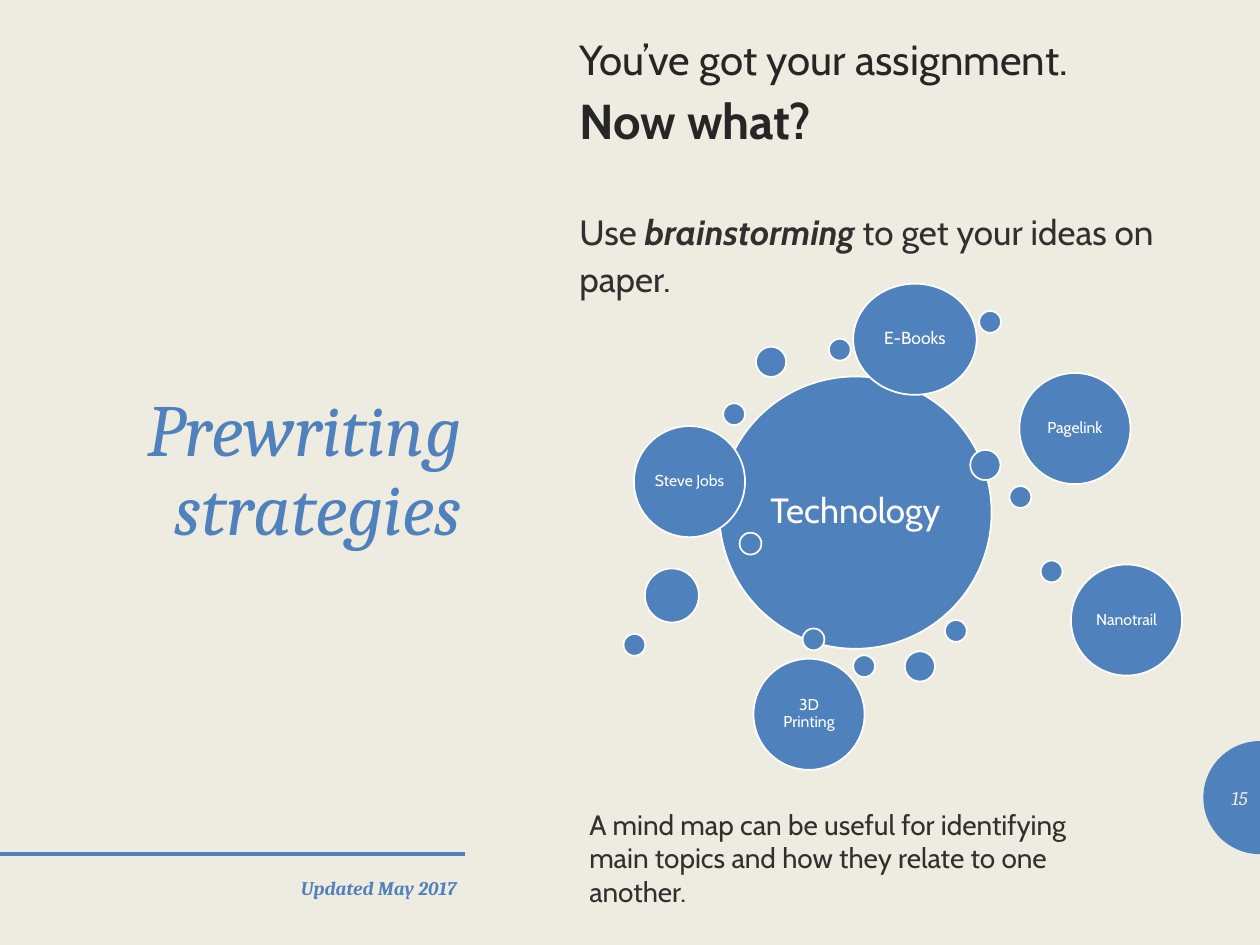
import math

import pptx
import pptx.dml.color
import pptx.enum.shapes
import pptx.enum.text
import pptx.oxml.ns
import pptx.util
from lxml import etree

Cm = pptx.util.Cm
Pt = pptx.util.Pt
ALIGN = pptx.enum.text.PP_ALIGN
ANCHOR = pptx.enum.text.MSO_ANCHOR

COLORS = {
    "background": "EEECE1",
    "accent": "4F81BD",
    "heading": "262626",
    "body": "303030",
    "white": "FFFFFF",
}
SMALL, MEDIUM, LARGE, TOPIC = 0.44, 0.61, 1.09, 2.24
BUBBLES = [
    (14.5, 7.59, 5.49, 5.49, "Technology", 20),
    (16.18, 12.67, SMALL),
    (20.35, 9.8, SMALL),
    (18.24, 13.13, MEDIUM),
    (16.71, 6.83, SMALL),
    (14.91, 10.74, SMALL),
    (12.78, 8.59, TOPIC, TOPIC, "Steve Jobs", 9),
    (15.24, 6.99, MEDIUM),
    (13, 11.46, LARGE),
    (20.55, 7.52, TOPIC, TOPIC, "Pagelink", 9),
    (19.56, 9.07, MEDIUM),
    (12.57, 12.78, SMALL),
    (19.05, 12.5, SMALL),
    (21.59, 11.38, TOPIC, TOPIC, "Nanotrail", 9),
    (20.98, 11.3, SMALL),
    (15.19, 13.28, TOPIC, TOPIC, "3D Printing", 9),
    (17.2, 13.21, SMALL),
    (17.2, 5.72, 2.49, TOPIC, "E-Books", 10),
    (14.58, 8.13, SMALL),
    (19.74, 6.27, SMALL),
]


class SlideBuilder:
    """Draws styled elements on the current slide."""

    def __init__(self, slide):
        self.slide = slide
        self.sans = "Cabin"
        self.serif = "Cambria"

    def color(self, name):
        return pptx.dml.color.RGBColor.from_string(COLORS[name])

    def background(self, name):
        fill = self.slide.background.fill
        fill.solid()
        fill.fore_color.rgb = self.color(name)

    def font(self, font, family, size, color, bold=False, italic=False):
        font.name, font.size = family, Pt(size)
        font.bold, font.italic = bold, italic
        font.color.rgb = self.color(color)

    def title(self, text, left, top, width, height):
        shape = self.slide.shapes.title
        shape.left, shape.top = Cm(left), Cm(top)
        shape.width, shape.height = Cm(width), Cm(height)
        frame = shape.text_frame
        frame.text = text
        frame.auto_size = pptx.enum.text.MSO_AUTO_SIZE.NONE
        frame.vertical_anchor = ANCHOR.MIDDLE
        paragraph = frame.paragraphs[0]
        paragraph.alignment = ALIGN.RIGHT
        paragraph.line_spacing = 0.9
        self.font(paragraph.font, self.serif, 42, "accent", italic=True)

    def text_box(self, left, top, width, height, anchor=ANCHOR.TOP):
        shape = self.slide.shapes.add_textbox(Cm(left), Cm(top), Cm(width), Cm(height))
        shape.text_frame.word_wrap = True
        shape.text_frame.vertical_anchor = anchor
        return shape.text_frame

    def label(self, text, box, family, size, color, bold=False, italic=False,
              align=ALIGN.LEFT, anchor=ANCHOR.TOP):
        paragraph = self.text_box(*box, anchor).paragraphs[0]
        paragraph.text = text
        paragraph.alignment = align
        self.font(paragraph.font, family, size, color, bold, italic)

    def run(self, paragraph, text, size, color, bold=False, italic=False):
        run = paragraph.add_run()
        run.text = text
        self.font(run.font, self.sans, size, color, bold, italic)

    def fill(self, shape, color):
        shape.shadow.inherit = False
        shape.fill.solid()
        shape.fill.fore_color.rgb = self.color(color)

    def bubble(self, left, top, width, height=None, text="", size=9):
        shape = self.slide.shapes.add_shape(
            pptx.enum.shapes.MSO_SHAPE.OVAL,
            Cm(left), Cm(top), Cm(width), Cm(height or width))
        self.fill(shape, "accent")
        shape.line.color.rgb = self.color("white")
        shape.line.width = Pt(1)
        if text:
            frame = shape.text_frame
            frame.word_wrap = True
            frame.vertical_anchor = ANCHOR.MIDDLE
            inset = Cm(size / 100)
            frame.margin_left = frame.margin_right = inset
            frame.margin_top = frame.margin_bottom = inset
            paragraph = frame.paragraphs[0]
            paragraph.text = text
            paragraph.alignment = ALIGN.CENTER
            paragraph.line_spacing = 0.9
            self.font(paragraph.font, self.sans, size, "white")

    def half_disc(self, center_x, center_y, radius, steps=48):
        angles = [math.pi * (0.5 + step / steps) for step in range(steps + 1)]
        points = [(Cm(center_x + radius * math.cos(angle)),
                   Cm(center_y + radius * math.sin(angle))) for angle in angles]
        builder = self.slide.shapes.build_freeform(*points[0])
        builder.add_line_segments(points[1:], close=True)
        shape = builder.convert_to_shape()
        self.fill(shape, "accent")
        shape.line.fill.background()

    def rule(self, left, right, top):
        connector = self.slide.shapes.add_connector(
            pptx.enum.shapes.MSO_CONNECTOR.STRAIGHT,
            Cm(left), Cm(top), Cm(right), Cm(top))
        connector.line.color.rgb = self.color("accent")
        connector.line.width = Pt(2)
        properties = connector._element.spPr
        etree.SubElement(properties, pptx.oxml.ns.qn("a:effectLst"))


def main():
    presentation = pptx.Presentation()
    presentation.slide_width, presentation.slide_height = Cm(25.4), Cm(19.05)
    slide = presentation.slides.add_slide(presentation.slide_layouts[5])
    builder = SlideBuilder(slide)

    builder.background("background")
    builder.half_disc(25.4, 16.08, 1.14)
    builder.rule(0, 9.37, 17.22)
    builder.title("Prewriting strategies", 1.57, 7.8, 7.98, 3.45)

    frame = builder.text_box(11.43, 0.43, 13, 5.82)
    question = frame.paragraphs[0]
    builder.run(question, "You’ve got your assignment. ", 24, "heading")
    question.add_line_break()
    builder.run(question, "Now what?", 28, "heading", bold=True)
    advice = frame.add_paragraph()
    advice.space_before = Pt(32)
    builder.run(advice, "Use ", 20, "body")
    builder.run(advice, "brainstorming", 20, "body", bold=True, italic=True)
    builder.run(advice, " to get your ideas on paper.", 20, "body")
    for paragraph in frame.paragraphs:
        paragraph.line_spacing = 1.12

    builder.label(
        "A mind map can be useful for identifying main topics "
        "and how they relate to one another.",
        (11.63, 16.15, 11.43, 1.63), builder.sans, 16, "body")
    for bubble in BUBBLES:
        builder.bubble(*bubble)

    builder.label("Updated May 2017 ", (1.6, 17.55, 7.95, 1.02), builder.serif, 11,
                  "accent", bold=True, italic=True, align=ALIGN.RIGHT)
    builder.label("15", (24.26, 15.57, 1.14, 1.02), builder.serif, 11, "background",
                  italic=True, align=ALIGN.RIGHT, anchor=ANCHOR.MIDDLE)
    presentation.save("out.pptx")


if __name__ == "__main__":
    main()
